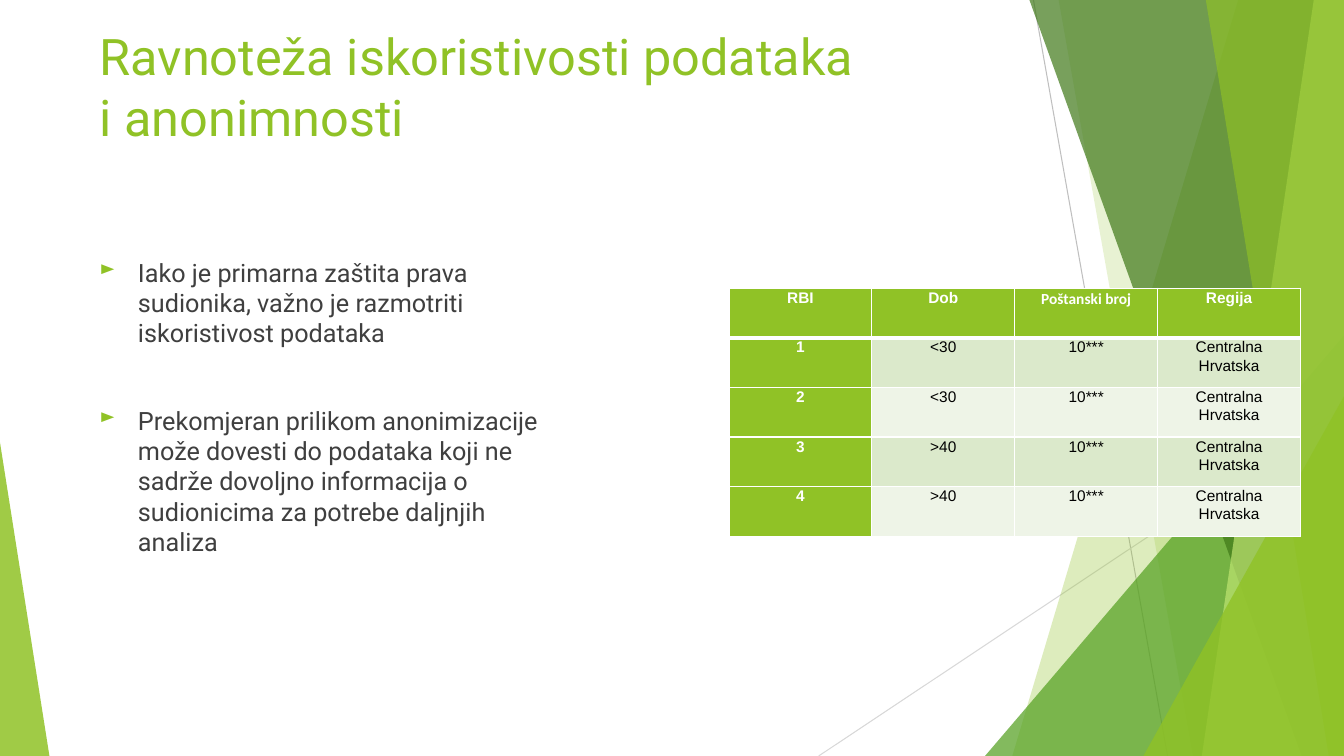
import lxml.etree
import pptx
import pptx.dml.color
import pptx.enum.shapes
import pptx.enum.text
import pptx.oxml
import pptx.oxml.ns
import pptx.util

Inches = pptx.util.Inches
Pt = pptx.util.Pt
RGBColor = pptx.dml.color.RGBColor
SHAPE = pptx.enum.shapes.MSO_SHAPE
qn = pptx.oxml.ns.qn

GREEN = RGBColor(0x90, 0xC2, 0x26)
LEAF = RGBColor(0x54, 0xA0, 0x21)
FOREST = RGBColor(0x3F, 0x78, 0x18)
LIME = RGBColor(0xBF, 0xE4, 0x71)
GREY = RGBColor(0xBF, 0xBF, 0xBF)
PALE_GREY = RGBColor(0xD8, 0xD8, 0xD8)
TEXT = RGBColor(0x3F, 0x3F, 0x3F)
WHITE = RGBColor(0xFF, 0xFF, 0xFF)
BLACK = RGBColor(0, 0, 0)
ROW_FILLS = [RGBColor(0xDB, 0xE9, 0xCB), RGBColor(0xEE, 0xF4, 0xE7)]

# Facets from back to front. A band runs down the right edge: its left side
# lies at the given distances from that edge, at the top and at the bottom.
# A peak is a right triangle in the lower right corner: width, height.
FACETS = [
    ("band", 1.05, 3.29, GREEN, 30),
    ("band", 2.83, 1.5, GREEN, 20),
    ("peak", 3.56, 4.17, LEAF, 72),
    ("band", 3.12, 0.42, FOREST, 70),
    ("band", 0.3, 1.41, LIME, 70),
    ("band", 1.37, 0.15, GREEN, 65),
    ("peak", 1.99, 3.57, GREEN, 80),
]

TITLE = "Ravnoteža iskoristivosti podataka \vi anonimnosti"
POINTS = [
    "Iako je primarna zaštita prava sudionika, važno je razmotriti iskoristivost podataka",
    "Prekomjeran prilikom anonimizacije može dovesti do podataka koji ne sadrže "
    "dovoljno informacija o sudionicima za potrebe daljnjih analiza",
]
RECORDS = [
    ["RBI", "Dob", "Poštanski broj", "Regija"],
    ["1", "<30", "10***", "Centralna Hrvatska"],
    ["2", "<30", "10***", "Centralna Hrvatska"],
    ["3", ">40", "10***", "Centralna Hrvatska"],
    ["4", ">40", "10***", "Centralna Hrvatska"],
]


def apply_format(target, values):
    for attribute, value in values.items():
        setattr(target, attribute, value)


def style_text(paragraph, size, font, color, bold=False):
    apply_format(paragraph.font, {"size": Pt(size), "name": font, "bold": bold})
    paragraph.font.color.rgb = color


def paint(facet, color, opacity):
    facet.shadow.inherit = False
    facet.line.fill.background()
    facet.fill.solid()
    facet.fill.fore_color.rgb = color
    tint = facet.fill._xPr.find(".//" + qn("a:srgbClr"))
    lxml.etree.SubElement(tint, qn("a:alpha"), val=str(opacity * 1000))


def add_ray(slide, start, end, color):
    ray = slide.shapes.add_connector(
        pptx.enum.shapes.MSO_CONNECTOR.STRAIGHT, *map(Inches, start + end))
    ray.line.color.rgb = color
    ray.line.width = Pt(0.75)
    lxml.etree.SubElement(ray._element.spPr, qn("a:effectLst"))


def add_peak(slide, left, top, width, height, apex, color, opacity):
    peak = slide.shapes.add_shape(
        SHAPE.ISOSCELES_TRIANGLE, *map(Inches, (left, top, width, height)))
    peak.adjustments[0] = apex
    paint(peak, color, opacity)


def add_facets(slide, left, top, width, height):
    right, bottom = left + width, top + height
    # Thin rays
    add_ray(slide, (left + 2.13, top), (left + 3.46, bottom), GREY)
    add_ray(slide, (right, top + 4.03), (left, bottom), PALE_GREY)
    # Translucent bands and peaks
    for kind, first, second, color, opacity in FACETS:
        if kind == "peak":
            add_peak(slide, right - first, bottom - second, first, second, 1, color, opacity)
            continue
        outline = slide.shapes.build_freeform(
            Inches(right - first), Inches(top), scale=1.0)
        outline.add_line_segments([
            (Inches(right), Inches(top)),
            (Inches(right), Inches(bottom)),
            (Inches(right - second), Inches(bottom)),
        ], close=True)
        paint(outline.convert_to_shape(), color, opacity)


def add_text_area(slide, left, top, width, height):
    frame = slide.shapes.add_textbox(*map(Inches, (left, top, width, height))).text_frame
    frame.word_wrap = True
    return frame


def add_title(slide, left, top, width, height):
    heading = add_text_area(slide, left, top, width, height).paragraphs[0]
    heading.text = TITLE
    style_text(heading, 36, "Roboto", GREEN)


def add_points(slide, left, top, width, height):
    frame = add_text_area(slide, left, top, width, height)
    frame.margin_top = Inches(0.48)
    for index, point in enumerate(POINTS):
        paragraph = frame.paragraphs[0] if index == 0 else frame.add_paragraph()
        paragraph.text = point
        paragraph.space_before = Pt(41 if index else 0)
        style_text(paragraph, 18, "Roboto", TEXT)
        # Hanging green arrow bullet
        properties = paragraph._p.get_or_add_pPr()
        properties.set("marL", str(Inches(0.38)))
        properties.set("indent", str(-Inches(0.38)))
        bullet_color = lxml.etree.Element(qn("a:buClr"))
        lxml.etree.SubElement(bullet_color, qn("a:srgbClr"), val=str(GREEN))
        bullet_size = lxml.etree.Element(qn("a:buSzPct"), val="80000")
        bullet = lxml.etree.Element(qn("a:buChar"), char="►")
        properties.find(qn("a:defRPr")).addprevious(bullet_color)
        bullet_color.addnext(bullet_size)
        bullet_size.addnext(bullet)


def add_borders(cell, widths):
    properties = cell._tc.get_or_add_tcPr()
    for side, width in widths.items():
        border = lxml.etree.SubElement(properties, qn("a:ln" + side), w=str(Pt(width)))
        fill = lxml.etree.SubElement(border, qn("a:solidFill"))
        lxml.etree.SubElement(fill, qn("a:srgbClr"), val=str(WHITE))


def add_records(slide, left, top, width, height):
    records = slide.shapes.add_table(
        len(RECORDS), len(RECORDS[0]), *map(Inches, (left, top, width, height))).table
    for row, values in enumerate(RECORDS):
        for column, value in enumerate(values):
            cell = records.cell(row, column)
            heading = row == 0 or column == 0
            # Borders, with a heavy rule under the header row
            add_borders(cell, {"L": 1, "R": 1, "T": 3 if row == 1 else 1,
                               "B": 3 if row == 0 else 1})
            cell.fill.solid()
            cell.fill.fore_color.rgb = GREEN if heading else ROW_FILLS[(row - 1) % 2]
            apply_format(cell, {
                "margin_left": Inches(0.07), "margin_right": Inches(0.07),
                "margin_top": 0, "margin_bottom": 0})
            # Cell text
            paragraph = cell.text_frame.paragraphs[0]
            paragraph.text = value
            apply_format(paragraph, {
                "alignment": pptx.enum.text.PP_ALIGN.CENTER, "line_spacing": 1.07})
            font = "Calibri" if (row, column) == (0, 2) else "Arial"
            style_text(paragraph, 11, font, WHITE if heading else BLACK, heading)


def main():
    deck = pptx.Presentation()
    apply_format(deck, {"slide_width": Inches(13.33), "slide_height": Inches(7.5)})
    slide = deck.slides.add_slide(deck.slide_layouts[6])
    add_facets(slide, 8.12, 0, 5.21, 7.5)
    add_peak(slide, 0, 4.39, 0.49, 3.11, 0, GREEN, 85)
    add_title(slide, 0.89, 0.2, 12.37, 1.45)
    add_points(slide, 0.89, 2.07, 4.58, 4.24)
    add_records(slide, 7.23, 2.86, 5.67, 2.46)
    deck.save("out.pptx")


if __name__ == "__main__":
    main()
